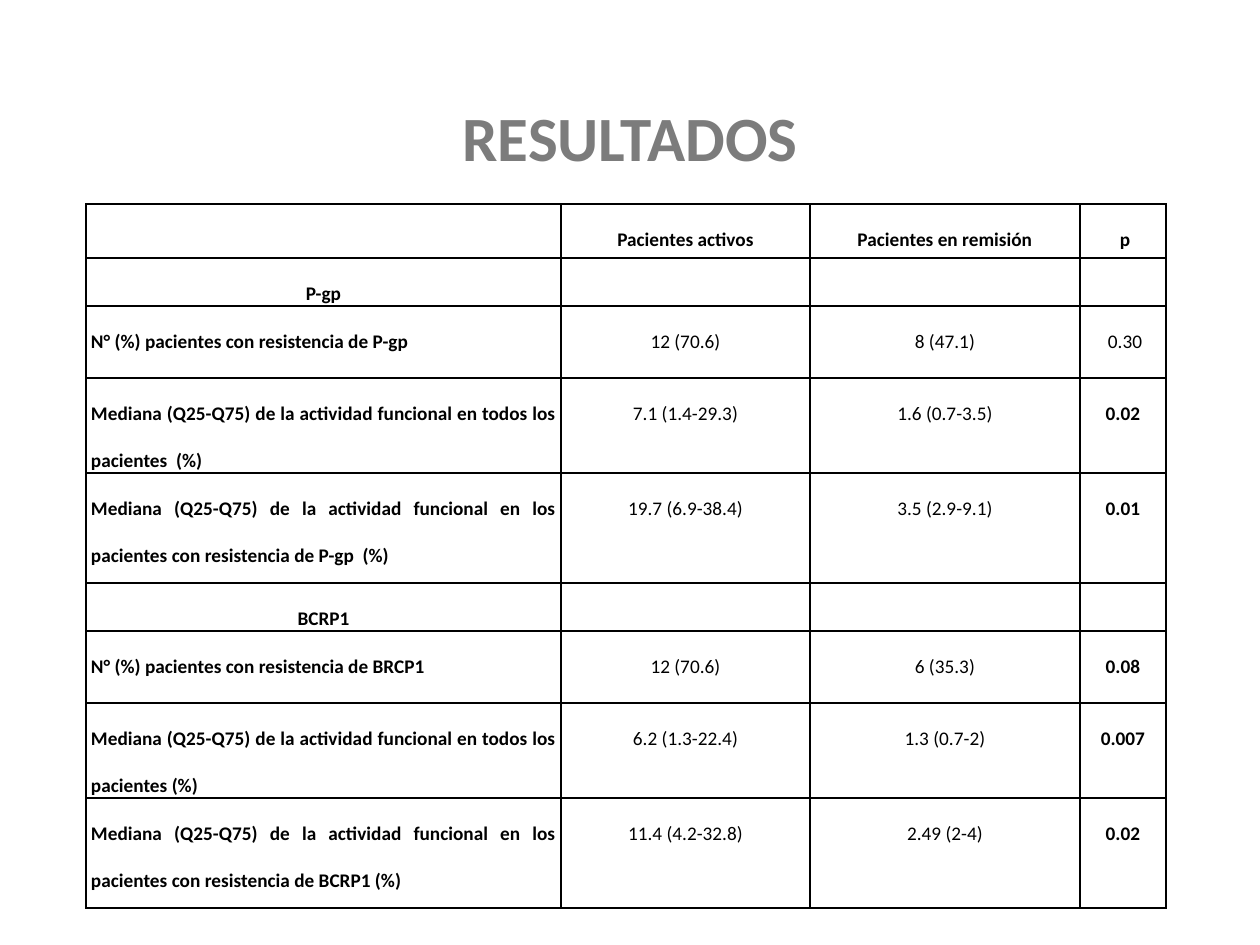
from lxml import etree
from pptx import Presentation
from pptx import util as u
from pptx.dml.color import RGBColor
from pptx.enum import text as t
from pptx.oxml import ns

PX = u.Inches(1) / 126
BLACK = RGBColor(0x00, 0x00, 0x00)
GRAY = RGBColor(0x7C, 0x7C, 0x7C)
CENTER, JUSTIFY = t.PP_ALIGN.CENTER, t.PP_ALIGN.JUSTIFY

COLUMN_WIDTHS = [475, 249, 270, 86]
HEADER_HEIGHT = 54
SECTION_HEIGHTS = [48, 72, 95, 110]

HEADER = ["", "Pacientes activos", "Pacientes en remisión", " p"]
SECTIONS = [
    [
        ["P-gp", "", "", ""],
        ["N° (%) pacientes con resistencia de P-gp", "12 (70.6)", "8 (47.1)", " 0.30"],
        ["Mediana (Q25-Q75) de la actividad funcional en todos los pacientes  (%)",
         "7.1 (1.4-29.3)", "1.6 (0.7-3.5)", "0.02"],
        ["Mediana (Q25-Q75) de la actividad funcional en los pacientes con "
         "resistencia de P-gp  (%)", "19.7 (6.9-38.4)", "3.5 (2.9-9.1)", "0.01"],
    ],
    [
        ["BCRP1", "", "", ""],
        ["N° (%) pacientes con resistencia de BRCP1", "12 (70.6)", "6 (35.3)", "0.08"],
        ["Mediana (Q25-Q75) de la actividad funcional en todos los pacientes (%)",
         "6.2 (1.3-22.4)", "1.3 (0.7-2)", "0.007"],
        ["Mediana (Q25-Q75) de la actividad funcional en los pacientes con "
         "resistencia de BCRP1 (%)", "11.4 (4.2-32.8)", "2.49 (2-4)", "0.02"],
    ],
]
NOT_BOLD_P = " 0.30"


def px(length):
    return u.Emu(round(length * PX))


def write(frame, words, size=11, color=BLACK, bold=False, align=CENTER, spacing=2.0):
    paragraph = frame.paragraphs[0]
    paragraph.alignment = align
    paragraph.line_spacing = spacing
    if not words:
        return
    run = paragraph.add_run()
    run.text = words
    run.font.name = "Calibri"
    run.font.size = u.Pt(size)
    run.font.bold = bold
    run.font.color.rgb = color


def add_borders(cell):
    properties = cell._tc.get_or_add_tcPr()
    for side in ("lnL", "lnR", "lnT", "lnB"):
        line = etree.SubElement(properties, ns.qn(f"a:{side}"), w=str(u.Pt(1)))
        fill = etree.SubElement(line, ns.qn("a:solidFill"))
        etree.SubElement(fill, ns.qn("a:srgbClr"), val=str(BLACK))


def place_title(slide, left, top, width, height):
    title = slide.shapes.title
    title.left, title.top = px(left), px(top)
    title.width, title.height = px(width), px(height)
    frame = title.text_frame
    frame.auto_size = t.MSO_AUTO_SIZE.NONE
    frame.vertical_anchor = t.MSO_ANCHOR.MIDDLE
    write(frame, "RESULTADOS", size=36, color=GRAY, bold=True, spacing=0.9)


def place_results(slide, left, top):
    rows = [HEADER] + [row for section in SECTIONS for row in section]
    heights = [HEADER_HEIGHT] + SECTION_HEIGHTS * len(SECTIONS)
    results = slide.shapes.add_table(
        len(rows), len(COLUMN_WIDTHS), px(left), px(top),
        px(sum(COLUMN_WIDTHS)), px(sum(heights))).table
    results.first_row = results.horz_banding = False
    for column, width in zip(results.columns, COLUMN_WIDTHS):
        column.width = px(width)

    for r, (row, height) in enumerate(zip(rows, heights)):
        results.rows[r].height = px(height)
        is_measure = row is not HEADER and row[1] != ""
        for c, words in enumerate(row):
            cell = results.cell(r, c)
            cell.margin_left = cell.margin_right = px(5)
            cell.margin_top = cell.margin_bottom = 0
            add_borders(cell)
            cell.fill.background()
            # Labels and p values stand out; patient figures stay regular
            bold = not is_measure or c == 0 or (c == 3 and words != NOT_BOLD_P)
            write(cell.text_frame, words, bold=bold,
                  align=JUSTIFY if is_measure and c == 0 else CENTER)


def main():
    deck = Presentation()
    deck.slide_width, deck.slide_height = px(1260), px(945)
    slide = deck.slides.add_slide(deck.slide_layouts[5])
    place_title(slide, 87, 50, 1086, 183)
    place_results(slide, 86, 204)
    deck.save("out.pptx")


if __name__ == "__main__":
    main()
